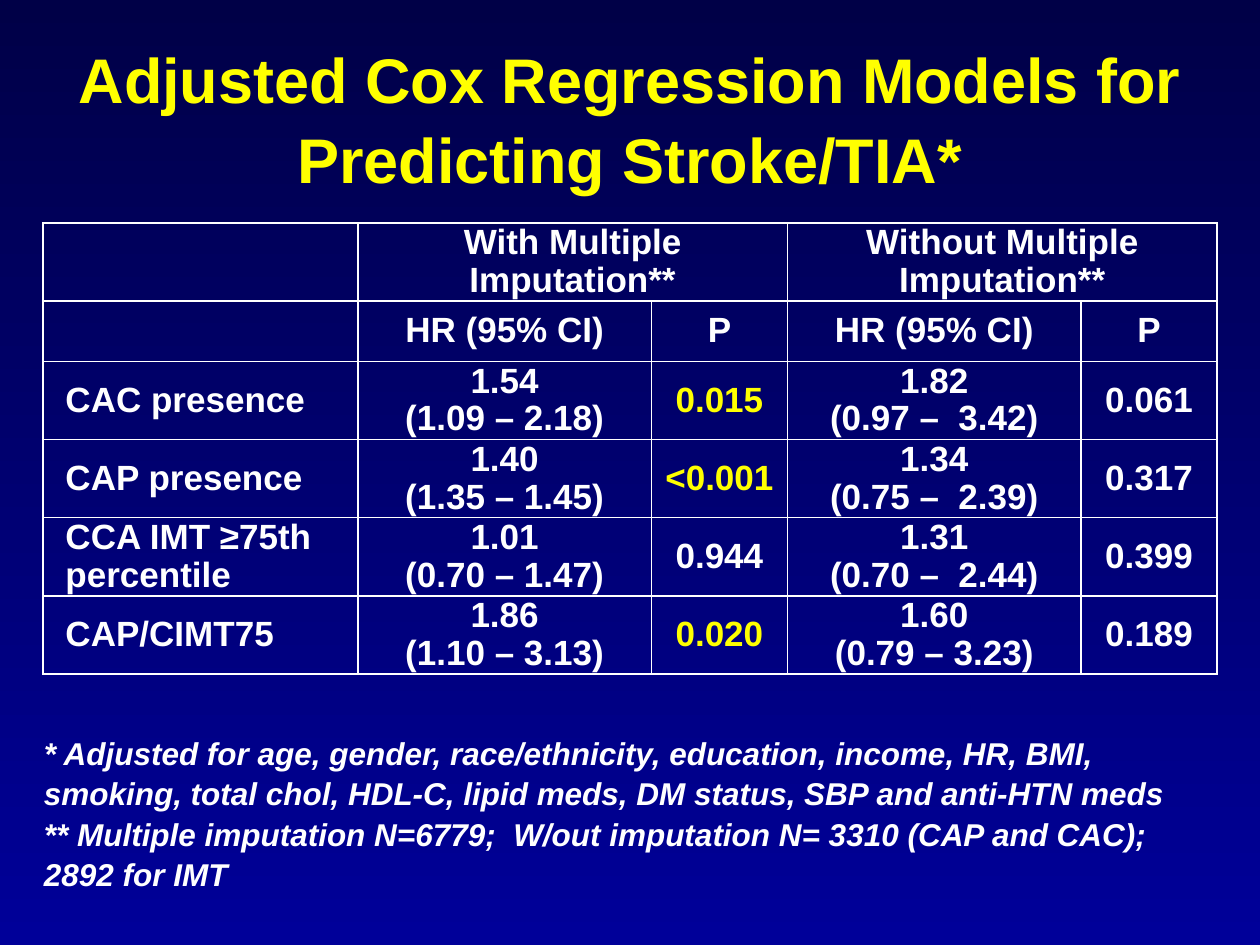
from dataclasses import dataclass

from lxml.etree import SubElement
from pptx import Presentation
from pptx.dml.color import RGBColor
from pptx.enum.text import MSO_ANCHOR as Anchor, MSO_AUTO_SIZE as AutoSize, PP_ALIGN as Align
from pptx.oxml.ns import qn
from pptx.util import Inches, Pt

WHITE = "FFFFFF"
YELLOW = "FFFF00"
COLUMN_WIDTHS = (2.5, 2.33, 1.08, 2.33, 1.08)
ROW_HEIGHTS = (0.62, 0.48, 0.62, 0.62, 0.62, 0.62)
CELL_FORMAT = {
    "vertical_anchor": Anchor.MIDDLE,
    "margin_left": Inches(0.07),
    "margin_right": Inches(0.07),
    "margin_top": 0,
    "margin_bottom": 0,
}
TITLE = "Adjusted Cox Regression Models for Predicting Stroke/TIA*"
FOOTNOTES = (
    "* Adjusted for age, gender, race/ethnicity, education, income, HR, BMI, "
    "smoking, total chol, HDL-C, lipid meds, DM status, SBP and anti-HTN meds ",
    "** Multiple imputation N=6779;  W/out imputation N= 3310 (CAP and CAC); 2892 for IMT",
)


@dataclass(frozen=True)
class Estimate:
    ratio: str
    interval: str
    p_value: str
    color: str = WHITE


@dataclass(frozen=True)
class Predictor:
    name: str
    imputed: Estimate
    complete: Estimate


PREDICTORS = (
    Predictor("CAC presence", Estimate("1.54", "(1.09 – 2.18)", "0.015", YELLOW),
              Estimate("1.82", "(0.97 –  3.42)", "0.061")),
    Predictor("CAP presence", Estimate("1.40", "(1.35 – 1.45)", "<0.001", YELLOW),
              Estimate("1.34", "(0.75 –  2.39)", "0.317")),
    Predictor("CCA IMT ≥75th percentile", Estimate("1.01", "(0.70 – 1.47)", "0.944"),
              Estimate("1.31", "(0.70 –  2.44)", "0.399")),
    Predictor("CAP/CIMT75", Estimate("1.86", "(1.10 – 3.13)", "0.020", YELLOW),
              Estimate("1.60", "(0.79 – 3.23)", "0.189")),
)


def rgb(color: str) -> RGBColor:
    return RGBColor.from_string(color)


def apply_format(target, values: dict) -> None:
    for name, value in values.items():
        setattr(target, name, value)


def add_run(paragraph, text: str, size: float, color: str, italic: bool = False) -> None:
    run = paragraph.add_run()
    run.text = text
    apply_format(run.font, {"name": "Arial", "size": Pt(size), "bold": True, "italic": italic})
    run.font.color.rgb = rgb(color)


def add_text_box(slide, left: float, top: float, width: float, height: float,
                 auto_size: AutoSize):
    shape = slide.shapes.add_textbox(Inches(left), Inches(top), Inches(width), Inches(height))
    apply_format(shape.text_frame, {
        "word_wrap": True, "auto_size": auto_size, "vertical_anchor": Anchor.MIDDLE,
    })
    return shape.text_frame.paragraphs[0]


def set_borders(cell) -> None:
    properties = cell._tc.get_or_add_tcPr()
    for index, side in enumerate(("lnL", "lnR", "lnT", "lnB")):
        line = properties.makeelement(qn(f"a:{side}"), {"w": str(Pt(1))})
        fill = SubElement(line, qn("a:solidFill"))
        SubElement(fill, qn("a:srgbClr"), val=WHITE)
        properties.insert(index, line)


def write_cell(cell, *lines: str, color: str = WHITE, align: Align = Align.CENTER) -> None:
    for index, line in enumerate(lines):
        frame = cell.text_frame
        paragraph = frame.add_paragraph() if index else frame.paragraphs[0]
        apply_format(paragraph, {"alignment": align, "line_spacing": 0.97})
        add_run(paragraph, line, 20, color)


def add_results_table(slide) -> None:
    table = slide.shapes.add_table(
        len(ROW_HEIGHTS), len(COLUMN_WIDTHS), Inches(0.34), Inches(1.77),
        Inches(sum(COLUMN_WIDTHS)), Inches(sum(ROW_HEIGHTS)),
    ).table
    apply_format(table, {"first_row": False, "horz_banding": False})
    for column, width in zip(table.columns, COLUMN_WIDTHS):
        column.width = Inches(width)
    for row, height in zip(table.rows, ROW_HEIGHTS):
        row.height = Inches(height)
    for cell in table.iter_cells():
        apply_format(cell, CELL_FORMAT)
        cell.fill.background()
        set_borders(cell)

    for column, heading in ((1, "With Multiple Imputation**"), (3, "Without Multiple Imputation**")):
        table.cell(0, column).merge(table.cell(0, column + 1))
        write_cell(table.cell(0, column), heading)
        write_cell(table.cell(1, column), "HR (95% CI)")
        write_cell(table.cell(1, column + 1), "P")

    for row, predictor in enumerate(PREDICTORS, start=2):
        name_cell = table.cell(row, 0)
        write_cell(name_cell, predictor.name, align=Align.LEFT)
        properties = name_cell.text_frame.paragraphs[0]._p.get_or_add_pPr()
        properties.set("marL", str(Inches(0.11)))
        properties.set("indent", "0")
        for column, estimate in ((1, predictor.imputed), (3, predictor.complete)):
            write_cell(table.cell(row, column), estimate.ratio, estimate.interval)
            write_cell(table.cell(row, column + 1), estimate.p_value, color=estimate.color)


def add_title(slide) -> None:
    paragraph = add_text_box(slide, 0.5, 0.3, 9, 1.25, AutoSize.NONE)
    apply_format(paragraph, {"alignment": Align.CENTER, "line_spacing": 1.05})
    add_run(paragraph, TITLE, 36, YELLOW)


def add_footnotes(slide) -> None:
    paragraph = add_text_box(slide, 0.25, 5.75, 9.5, 1.39, AutoSize.SHAPE_TO_FIT_TEXT)
    apply_format(paragraph, {"line_spacing": Pt(23), "space_before": Pt(6)})
    for index, note in enumerate(FOOTNOTES):
        if index:
            paragraph.add_line_break()
        add_run(paragraph, note, 18, WHITE, italic=True)


def set_background(slide) -> None:
    fill = slide.background.fill
    fill.gradient()
    fill.gradient_angle = 270
    for stop, position, color in zip(fill.gradient_stops, (0, 1), ("000047", "000099")):
        stop.position = position
        stop.color.rgb = rgb(color)


def main() -> None:
    presentation = Presentation()
    apply_format(presentation, {"slide_width": Inches(10), "slide_height": Inches(7.5)})
    slide = presentation.slides.add_slide(presentation.slide_layouts[6])
    set_background(slide)
    add_results_table(slide)
    add_title(slide)
    add_footnotes(slide)
    presentation.save("out.pptx")


if __name__ == "__main__":
    main()
